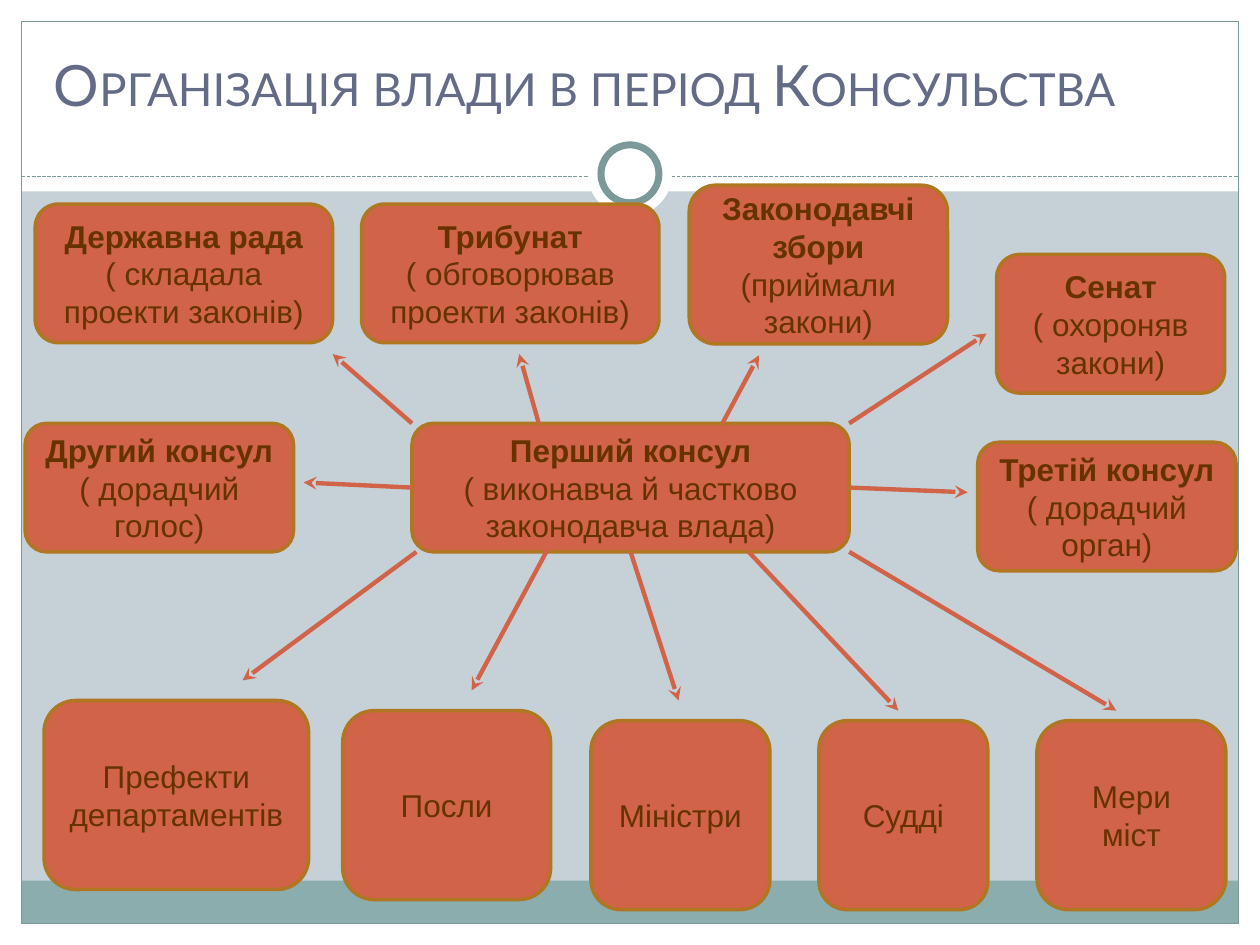
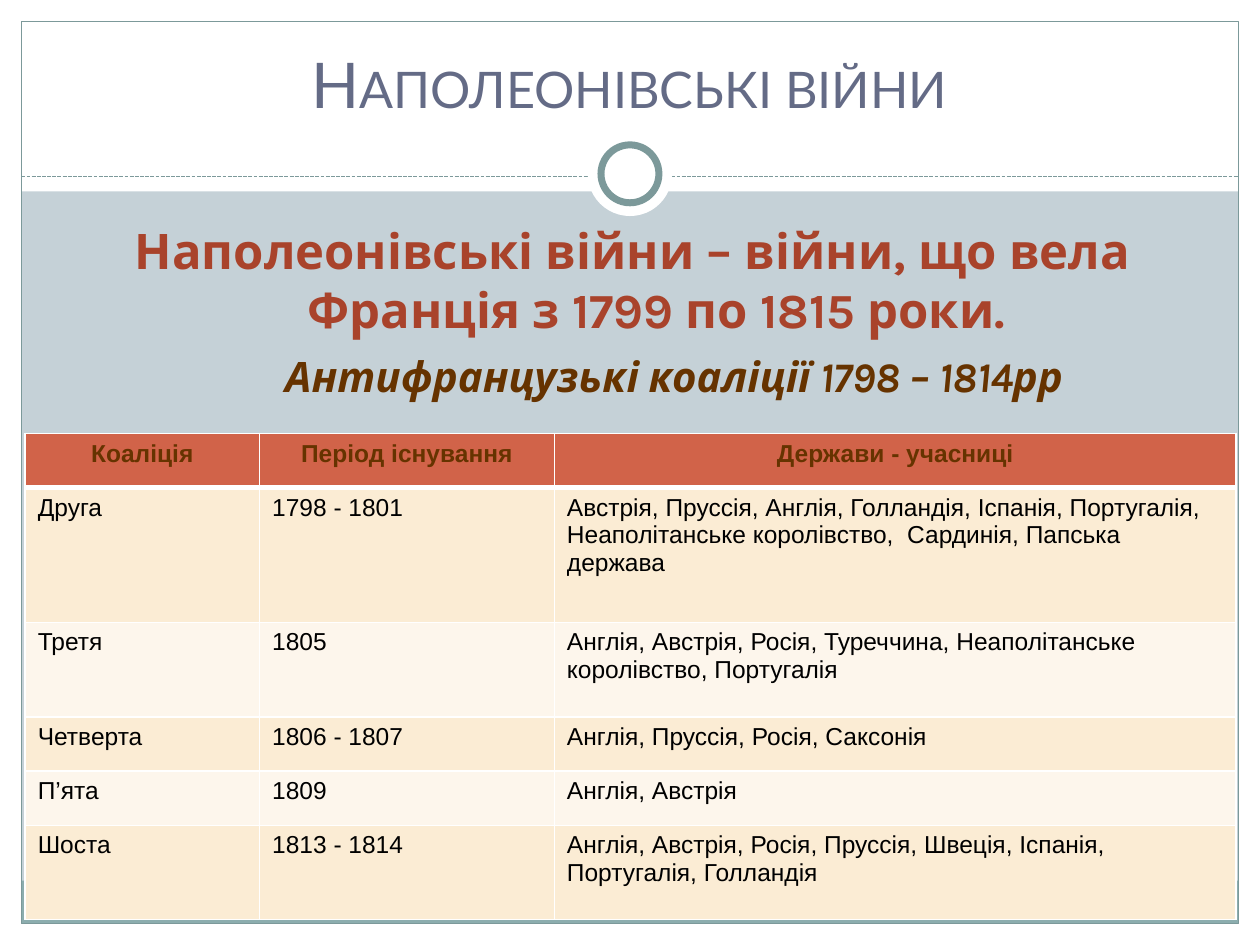
import dataclasses

import pptx
import pptx.dml.color
import pptx.enum.dml
import pptx.enum.shapes
import pptx.enum.text
import pptx.oxml
import pptx.oxml.ns
import pptx.util

COLS, ROWS = 100, 75
CELL = pptx.util.Inches(0.1)
SHAPE = pptx.enum.shapes.MSO_SHAPE
ALIGN = pptx.enum.text.PP_ALIGN
ANCHOR = pptx.enum.text.MSO_ANCHOR
NS = pptx.oxml.ns.nsdecls("a")


@dataclasses.dataclass(frozen=True)
class Theme:
    page: str = "C5D1D7"
    white: str = "FFFFFF"
    black: str = "000000"
    band: str = "8CADAE"
    frame: str = "7C999A"
    title: str = "646B86"
    accent: str = "D16349"
    edge: str = "B07621"
    brown: str = "663300"
    lead: str = "A9432B"
    row_tints: tuple = ("FBECD4", "FDF6EC")
    title_font: str = "Lato"
    lead_font: str = "Karla"
    font: str = "Arial"
    lead_size: float = 28
    sub_size: float = 24
    node_size: float = 18
    cell_size: float = 14


@dataclasses.dataclass(frozen=True)
class Box:
    x: float
    y: float
    w: float
    h: float

    def inner(self, x, y, w, h):
        return Box(self.x + x, self.y + y, w, h)

    def point(self, fx, fy):
        return self.x + self.w * fx, self.y + self.h * fy

    def emu(self):
        return [grid(v) for v in (self.x, self.y, self.w, self.h)]


T = Theme()
SLIDE = Box(0, 0, COLS, ROWS)


def grid(n):
    return int(round(n * CELL))


def rgb(color):
    return pptx.dml.color.RGBColor.from_string(color)


def add_run(p, text, size, color, font=T.font, bold=False, italic=False):
    r = p.add_run()
    r.text = text
    r.font.size = pptx.util.Pt(size)
    r.font.name = font
    r.font.bold = bold
    r.font.italic = italic
    r.font.color.rgb = rgb(color)
    return r


def add_text(s, box, text, size, color, font, align=ALIGN.CENTER, anchor=ANCHOR.TOP, **style):
    tf = s.shapes.add_textbox(*box.emu()).text_frame
    tf.word_wrap = True
    tf.vertical_anchor = anchor
    p = tf.paragraphs[0]
    p.alignment = align
    return p, add_run(p, text, size, color, font, **style)


def add_shape(s, kind, box, fill=None, line=None, width=0.75):
    sp = s.shapes.add_shape(kind, *box.emu())
    sp.shadow.inherit = False
    if fill:
        sp.fill.solid()
        sp.fill.fore_color.rgb = rgb(fill)
    else:
        sp.fill.background()
    if line:
        sp.line.color.rgb = rgb(line)
        sp.line.width = pptx.util.Pt(width)
    else:
        sp.line.fill.background()
    return sp


def add_line(s, start, end, color, width):
    c = s.shapes.add_connector(pptx.enum.shapes.MSO_CONNECTOR.STRAIGHT,
                               *[grid(v) for v in (*start, *end)])
    c.line.color.rgb = rgb(color)
    c.line.width = pptx.util.Pt(width)
    c._element.spPr.append(pptx.oxml.parse_xml(f"<a:effectLst {NS}/>"))
    return c


def add_arrow(s, start, end):
    c = add_line(s, start, end, T.accent, 2.5)
    c.line._ln.append(pptx.oxml.parse_xml(f'<a:tailEnd {NS} type="stealth"/>'))


def draw_frame(s, box):
    s.background.fill.solid()
    s.background.fill.fore_color.rgb = rgb(T.page)
    margin, head, divider = 1.7, 15.2, 14
    panel = box.inner(margin, margin, box.w - 2 * margin, box.h - 2 * margin)
    for edge in (box.inner(0, box.h - margin, box.w, margin),
                 box.inner(0, 0, box.w, head),
                 box.inner(0, 0, margin, box.h),
                 box.inner(box.w - margin, 0, margin, box.h)):
        add_shape(s, SHAPE.RECTANGLE, edge, T.white)
    add_shape(s, SHAPE.RECTANGLE, panel.inner(0, panel.h - 3.4, panel.w, 3.4), T.band)
    add_shape(s, SHAPE.RECTANGLE, panel, line=T.frame)
    rule = add_line(s, (panel.x, divider), (panel.x + panel.w, divider), T.frame, 0.75)
    rule.line.dash_style = pptx.enum.dml.MSO_LINE.SQUARE_DOT
    for d, line in ((6.7, None), (4.6, T.frame)):
        ring = box.inner((box.w - d) / 2, 13.8 - d / 2, d, d)
        add_shape(s, SHAPE.OVAL, ring, T.white, line, 4)


def draw_title(s, box, text, size, align):
    p, r = add_text(s, box, text, size, T.title, T.title_font, align, ANCHOR.MIDDLE)
    r.font._element.set("cap", "small")


def new_slide(prs, title, size, align):
    s = prs.slides.add_slide(prs.slide_layouts[6])
    draw_frame(s, SLIDE)
    draw_title(s, SLIDE.inner(3.3, 2.5, 93.3, 8.3), title, size, align)
    return s


def draw_node(s, box, name, note):
    sp = add_shape(s, SHAPE.ROUNDED_RECTANGLE, box, T.accent, T.edge, 2)
    tf = sp.text_frame
    tf.word_wrap = True
    tf.vertical_anchor = ANCHOR.MIDDLE
    p = tf.paragraphs[0]
    p.alignment = ALIGN.CENTER
    add_run(p, name, T.node_size, T.brown, bold=bool(note))
    if note:
        p = tf.add_paragraph()
        p.alignment = ALIGN.CENTER
        add_run(p, note, T.node_size, T.brown)


# name, note, place, hub share, tip share, gap
BODIES = [
    ("Державна рада", "( складала проекти законів)", (0.8, 1.5, 23.6, 11), (0, 0), (1, 1), (0, 0.9)),
    ("Трибунат", "( обговорював проекти законів)", (26.7, 1.5, 23.6, 11), (0.29, 0), (0.53, 1), (0, 0.9)),
    ("Законодавчі збори", "(приймали закони)", (52.7, 0, 20.5, 12.6), (0.71, 0), (0.27, 1), (0, 0.9)),
    ("Сенат", "( охороняв закони)", (77.1, 5.5, 18.1, 11), (1, 0), (0, 0.57), (-0.8, 0)),
    ("Другий консул", "( дорадчий голос)", (0, 18.9, 21.3, 10.2), (0, 0.5), (1, 0.46), (0.8, 0)),
    ("Третій консул", "( дорадчий орган)", (75.6, 20.4, 20.5, 10.2), (1, 0.5), (0, 0.39), (-0.8, 0)),
    ("Префекти департаментів", "", (1.5, 40.9, 21, 15), (0.01, 1), (0.75, 0), (0, -1.6)),
    ("Посли", "", (25.2, 41.7, 16.5, 15), (0.32, 0.92), (0.62, 0), (0, -1.6)),
    ("Міністри", "", (44.9, 42.5, 14.2, 15), (0.5, 1), (0.49, 0), (0, -1.6)),
    ("Судді", "", (63, 42.5, 13.4, 15), (0.77, 1), (0.47, 0), (0, -0.8)),
    ("Мери міст", "", (80.3, 42.5, 15, 15), (1, 1), (0.42, 0), (0, -0.8)),
]


def draw_power_scheme(s, box):
    hub = box.inner(30.7, 18.9, 34.7, 10.2)
    draw_node(s, hub, "Перший консул", "( виконавча й частково законодавча влада)")
    arrows = []
    for name, note, place, start, tip, (dx, dy) in BODIES:
        node = box.inner(*place)
        draw_node(s, node, name, note)
        x, y = node.point(*tip)
        arrows.append((hub.point(*start), (x + dx, y + dy)))
    for start, end in arrows:
        add_arrow(s, start, end)


def draw_lead(s, box):
    p, r = add_text(s, box.inner(0, 0, box.w, 11.8),
                    "Наполеонівські війни – війни, що вела Франція з 1799 по 1815 роки.",
                    T.lead_size, T.lead, T.lead_font, bold=True)
    indent = pptx.util.Inches(0.38)
    p._p.get_or_add_pPr().set("marL", str(indent))
    p._p.get_or_add_pPr().set("indent", str(-indent))
    add_text(s, box.inner(14.1, 10.3, 74.8, 5.1), "Антифранцузькі коаліції 1798 – 1814рр",
             T.sub_size, T.brown, T.lead_font, bold=True, italic=True)


COALITIONS = [
    ("Коаліція", "Період існування", "Держави - учасниці"),
    ("Друга", "1798 - 1801", "Австрія, Пруссія, Англія, Голландія, Іспанія, Португалія, "
     "Неаполітанське королівство,  Сардинія, Папська держава"),
    ("Третя", "1805", "Англія, Австрія, Росія, Туреччина, Неаполітанське королівство, Португалія"),
    ("Четверта", "1806 - 1807", "Англія, Пруссія, Росія, Саксонія"),
    ("П’ята", "1809", "Англія, Австрія"),
    ("Шоста", "1813 - 1814", "Англія, Австрія, Росія, Пруссія, Швеція, Іспанія, Португалія, Голландія"),
]


def set_borders(cell, widths):
    tcPr = cell._tc.get_or_add_tcPr()
    for i, (side, width) in enumerate(zip("LRTB", widths)):
        tcPr.insert(i, pptx.oxml.parse_xml(
            f'<a:ln{side} {NS} w="{pptx.util.Pt(width)}"><a:solidFill>'
            f'<a:srgbClr val="{T.white}"/></a:solidFill></a:ln{side}>'))


def draw_coalitions(s, box):
    table = s.shapes.add_table(len(COALITIONS), 3, *box.emu()).table
    table.first_row = table.horz_banding = False
    for column, w in zip(table.columns, (18.6, 23.4, 54.1)):
        column.width = grid(w)
    for row, h in zip(table.rows, (4.3, 10.7, 7.5, 4.3, 4.3, 7.5)):
        row.height = grid(h)
    for i, texts in enumerate(COALITIONS):
        head = i == 0
        for j, text in enumerate(texts):
            cell = table.cell(i, j)
            cell.fill.solid()
            cell.fill.fore_color.rgb = rgb(T.accent if head else T.row_tints[(i - 1) % 2])
            set_borders(cell, (1, 1, 3 if i == 1 else 1, 3 if head else 1))
            p = cell.text_frame.paragraphs[0]
            p.alignment = ALIGN.CENTER if head else ALIGN.LEFT
            add_run(p, text, T.cell_size, T.brown if head else T.black, bold=head)


def main():
    prs = pptx.Presentation()
    prs.slide_width, prs.slide_height = grid(COLS), grid(ROWS)
    s = new_slide(prs, "Організація влади в період Консульства", 32.5, ALIGN.LEFT)
    draw_power_scheme(s, SLIDE.inner(2, 14.7, 96.1, 57.5))
    s = new_slide(prs, "Наполеонівські війни", 36, ALIGN.CENTER)
    draw_lead(s, SLIDE.inner(2, 17, 96.4, 15.4))
    draw_coalitions(s, SLIDE.inner(2, 34.4, 96.1, 38.6))
    prs.save("out.pptx")


if __name__ == "__main__":
    main()
